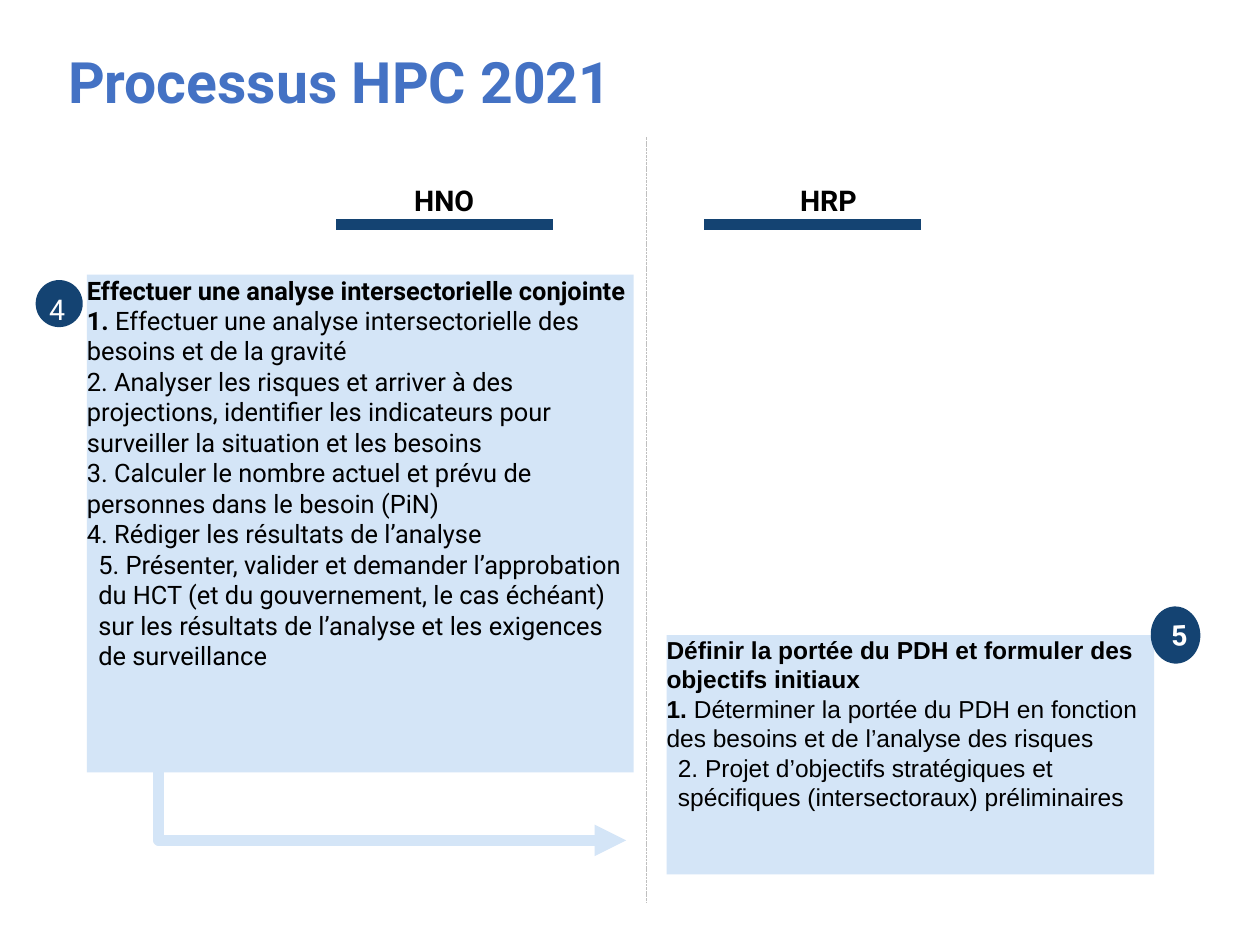
from dataclasses import dataclass

from lxml import etree
from pptx import Presentation
from pptx import util as u
from pptx.dml.color import RGBColor
from pptx.enum import dml, shapes, text
from pptx.oxml.ns import qn

COLS, ROWS = 100, 75


@dataclass(frozen=True)
class Theme:
    title: str = "4472C4"
    navy: str = "144372"
    pale: str = "D4E5F7"
    rule: str = "BFBFBF"
    ink: str = "000000"
    white: str = "FFFFFF"
    font: str = "Roboto"
    alt_font: str = "Arial"
    title_size: float = 32.6
    label_size: float = 16.3


@dataclass(frozen=True)
class Box:
    col: float
    row: float
    cols: float
    rows: float


@dataclass(frozen=True)
class Header:
    label: str
    box: Box
    bar_start: float


@dataclass(frozen=True)
class Panel:
    box: Box
    heading: str
    steps: tuple[str, ...]
    font: str
    size: float


THEME = Theme()
HEADERS = (
    Header("HNO", Box(20.5, 13.2, 29.5, 3.6), 26.7),
    Header("HRP", Box(51, 13.2, 29.5, 3.6), 55.9),
)
PANELS = (
    Panel(
        Box(6.9, 21.8, 43.4, 39.5),
        "Effectuer une analyse intersectorielle conjointe",
        (
            "Effectuer une analyse intersectorielle des besoins et de la gravité",
            "Analyser les risques et arriver à des projections, identifier les "
            "indicateurs pour surveiller la situation et les besoins",
            "Calculer le nombre actuel et prévu de personnes dans le besoin (PiN)",
            "Rédiger les résultats de l’analyse",
            "Présenter, valider et demander l’approbation du HCT (et du gouvernement, "
            "le cas échéant) sur les résultats de l’analyse et les exigences de surveillance",
        ),
        THEME.font,
        14.5,
    ),
    Panel(
        Box(52.9, 50.4, 38.7, 19),
        "Définir la portée du PDH et formuler des objectifs initiaux",
        (
            "Déterminer la portée du PDH en fonction des besoins et de l’analyse des risques",
            "Projet d’objectifs stratégiques et spécifiques (intersectoraux) préliminaires",
        ),
        THEME.alt_font,
        14,
    ),
)

prs = Presentation()
prs.slide_width, prs.slide_height = u.Inches(10), u.Inches(7.5)


def x(cols: float) -> int:
    return round(prs.slide_width * cols / COLS)


def y(rows: float) -> int:
    return round(prs.slide_height * rows / ROWS)


def place(box: Box) -> tuple[int, int, int, int]:
    return x(box.col), y(box.row), x(box.cols), y(box.rows)


def rgb(color: str) -> RGBColor:
    return RGBColor.from_string(color)


def style(font, size: float, color: str, bold: bool = False, name: str = THEME.font) -> None:
    font.name, font.size, font.bold = name, u.Pt(size), bold
    font.color.rgb = rgb(color)


def prepare(tf, anchor=text.MSO_ANCHOR.TOP) -> None:
    tf.word_wrap = True
    tf.auto_size = text.MSO_AUTO_SIZE.NONE
    tf.vertical_anchor = anchor
    tf.margin_left = tf.margin_top = tf.margin_right = tf.margin_bottom = 0


def add_line(s, start, end, color: str, width: float, kind=shapes.MSO_CONNECTOR.STRAIGHT):
    line = s.shapes.add_connector(kind, x(start[0]), y(start[1]), x(end[0]), y(end[1]))
    line.line.color.rgb = rgb(color)
    line.line.width = u.Pt(width)
    etree.SubElement(line._element.spPr, qn("a:effectLst"))
    return line


def add_filled(s, kind, box: Box, color: str):
    sp = s.shapes.add_shape(kind, *place(box))
    sp.shadow.inherit = False
    sp.fill.solid()
    sp.fill.fore_color.rgb = rgb(color)
    sp.line.fill.background()
    return sp


def add_circle(s, box: Box):
    sp = add_filled(s, shapes.MSO_SHAPE.OVAL, box, THEME.navy)
    sp.line.color.rgb = rgb(THEME.navy)
    sp.line.width = u.Pt(1)
    return sp


def add_label(s, box: Box, label: str, color: str, bold: bool, align) -> None:
    tf = s.shapes.add_textbox(*place(box)).text_frame
    prepare(tf)
    p = tf.paragraphs[0]
    p.text, p.alignment, p.line_spacing = label, align, 1.5
    style(p.font, THEME.label_size, color, bold)


def add_header(s, header: Header) -> None:
    add_label(s, header.box, header.label, THEME.ink, True, text.PP_ALIGN.CENTER)
    start = header.bar_start
    add_line(s, (start, 17.8), (start + 17.2, 17.8), THEME.navy, 6)


def add_panel(s, panel: Panel) -> None:
    tf = add_filled(s, shapes.MSO_SHAPE.RECTANGLE, panel.box, THEME.pale).text_frame
    prepare(tf)
    p = tf.paragraphs[0]
    p.text, p.alignment = panel.heading, text.PP_ALIGN.LEFT
    style(p.font, panel.size, THEME.ink, True, panel.font)
    for number, step in enumerate(panel.steps, 1):
        p = tf.add_paragraph()
        p.alignment = text.PP_ALIGN.LEFT
        style(p.font, panel.size, THEME.ink, False, panel.font)
        r = p.add_run()
        r.text = f"{number}. "
        if number == 1:
            r.font.bold = True
        p.add_run().text = step
    p.space_after = u.Pt(6)
    p._p.get_or_add_pPr().set("marL", str(x(0.9)))


def add_title(s) -> None:
    title = s.shapes.title
    title.left, title.top, title.width, title.height = place(Box(5.4, 3.7, 67.8, 4.7))
    prepare(title.text_frame)
    p = title.text_frame.paragraphs[0]
    p.text, p.alignment = "Processus HPC 2021", text.PP_ALIGN.LEFT
    style(p.font, THEME.title_size, THEME.title, True)


def add_badges(s) -> None:
    add_circle(s, Box(2.9, 22.3, 3.6, 3.6))
    add_label(s, Box(3.9, 21.8, 1.4, 3.6), "4", THEME.white, False, text.PP_ALIGN.LEFT)
    sp = add_circle(s, Box(91.4, 48.2, 3.8, 4.4))
    sp.rotation = 356.8
    sp.text_frame.vertical_anchor = text.MSO_ANCHOR.MIDDLE
    p = sp.text_frame.paragraphs[0]
    p.text, p.alignment = "5", text.PP_ALIGN.CENTER
    style(p.font, THEME.label_size, THEME.white, True)


def add_arrow(s) -> None:
    arrow = add_line(s, (13, 61.3), (49.7, 66.7), THEME.pale, 6, shapes.MSO_CONNECTOR.ELBOW)
    guides = arrow._element.spPr.find(qn("a:prstGeom")).get_or_add_avLst()
    etree.SubElement(guides, qn("a:gd"), name="adj1", fmla="val -1100")
    etree.SubElement(arrow.line._get_or_add_ln(), qn("a:tailEnd"), type="triangle")


def main() -> None:
    s = prs.slides.add_slide(prs.slide_layouts[5])
    add_title(s)
    divider = add_line(s, (51.3, 10.9), (51.3, 71.6), THEME.rule, 0.5)
    divider.line.dash_style = dml.MSO_LINE.SQUARE_DOT
    for header in HEADERS:
        add_header(s, header)
    for panel in PANELS:
        add_panel(s, panel)
    add_badges(s)
    add_arrow(s)
    prs.save("out.pptx")


if __name__ == "__main__":
    main()
